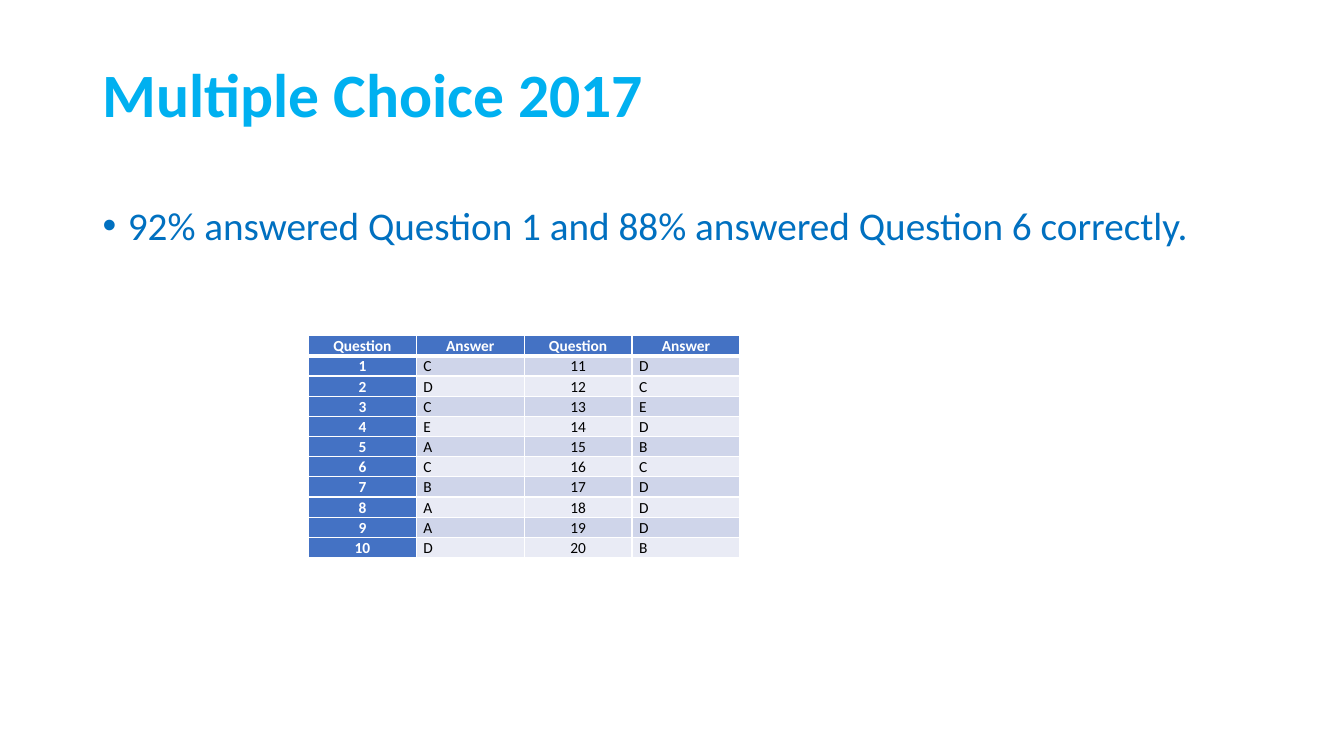
"""Build a slide with the answer key of the 2017 multiple choice test."""
from dataclasses import dataclass

from lxml import etree
from pptx import Presentation
from pptx.dml.color import RGBColor
from pptx.enum import text as t
from pptx.oxml import ns
from pptx.util import Inches, Pt


@dataclass(frozen=True)
class Theme:
    font: str = "Calibri"
    title: str = "00B0F0"
    body: str = "0070C0"
    header: str = "4472C4"
    bands: tuple = ("CFD5EA", "E9EBF5")
    white: str = "FFFFFF"
    black: str = "000000"
    title_size: int = 44
    body_size: int = 28
    cell_size: int = 11


THEME = Theme()


def add_text(tf, text, size, color, bold=False, align=t.PP_ALIGN.LEFT,
             spacing=0.9, bullet=None):
    """Write one formatted paragraph into a text frame."""
    tf.word_wrap = True
    p = tf.paragraphs[0]
    if bullet:
        pPr = p._p.get_or_add_pPr()
        pPr.set("marL", str(Inches(0.25)))
        pPr.set("indent", str(-Inches(0.25)))
        etree.SubElement(pPr, ns.qn("a:buFont"), typeface="Arial")
        etree.SubElement(pPr, ns.qn("a:buChar"), char=bullet)
    p.alignment = align
    p.line_spacing = spacing
    r = p.add_run()
    r.text = text
    r.font.name = THEME.font
    r.font.size = Pt(size)
    r.font.bold = bold
    r.font.color.rgb = RGBColor.from_string(color)


def set_borders(cell, color, widths):
    """Draw the cell borders, given a width in points for each side."""
    tcPr = cell._tc.get_or_add_tcPr()
    for side, width in widths.items():
        ln = etree.SubElement(tcPr, ns.qn(f"a:ln{side}"), w=str(Pt(width)))
        fill = etree.SubElement(ln, ns.qn("a:solidFill"))
        etree.SubElement(fill, ns.qn("a:srgbClr"), val=color)


prs = Presentation()
prs.slide_width = Inches(13.33)
prs.slide_height = Inches(7.5)
s = prs.slides.add_slide(prs.slide_layouts[6])

sp = s.shapes.add_textbox(Inches(0.92), Inches(0.4), Inches(11.5), Inches(1.14))
sp.text_frame.vertical_anchor = t.MSO_ANCHOR.MIDDLE
add_text(sp.text_frame, "Multiple Choice 2017", THEME.title_size, THEME.title, bold=True)

sp = s.shapes.add_textbox(Inches(0.92), Inches(2), Inches(11.5), Inches(4.76))
add_text(sp.text_frame, "92% answered Question 1 and 88% answered Question 6 correctly.",
         THEME.body_size, THEME.body, bullet="•")

answers = "CDCEACBAADDCEDBCDDDB"
half = len(answers) // 2
rows = [("Question", "Answer") * 2]
for i in range(half):
    rows.append((str(i + 1), answers[i], str(i + 1 + half), answers[i + half]))

col_width, row_height = Inches(1.07), Inches(0.2)
table = s.shapes.add_table(len(rows), 4, Inches(3.06), Inches(3.33),
                           col_width * 4, row_height * len(rows)).table
table.first_col = True
for column in table.columns:
    column.width = col_width

for i, row in enumerate(rows):
    table.rows[i].height = row_height
    for j, value in enumerate(row):
        cell = table.cell(i, j)
        cell.margin_left = cell.margin_right = Inches(0.07)
        cell.margin_top = cell.margin_bottom = 0
        set_borders(cell, THEME.white,
                    {"L": 1, "R": 1, "T": 3 if i == 1 else 1, "B": 3 if i == 0 else 1})
        heading = i == 0 or j == 0
        cell.fill.solid()
        cell.fill.fore_color.rgb = RGBColor.from_string(
            THEME.header if heading else THEME.bands[(i - 1) % 2])
        centred = i == 0 or j % 2 == 0
        add_text(cell.text_frame, value, THEME.cell_size,
                 THEME.white if heading else THEME.black, bold=heading, spacing=1.07,
                 align=t.PP_ALIGN.CENTER if centred else t.PP_ALIGN.LEFT)

prs.save("out.pptx")
